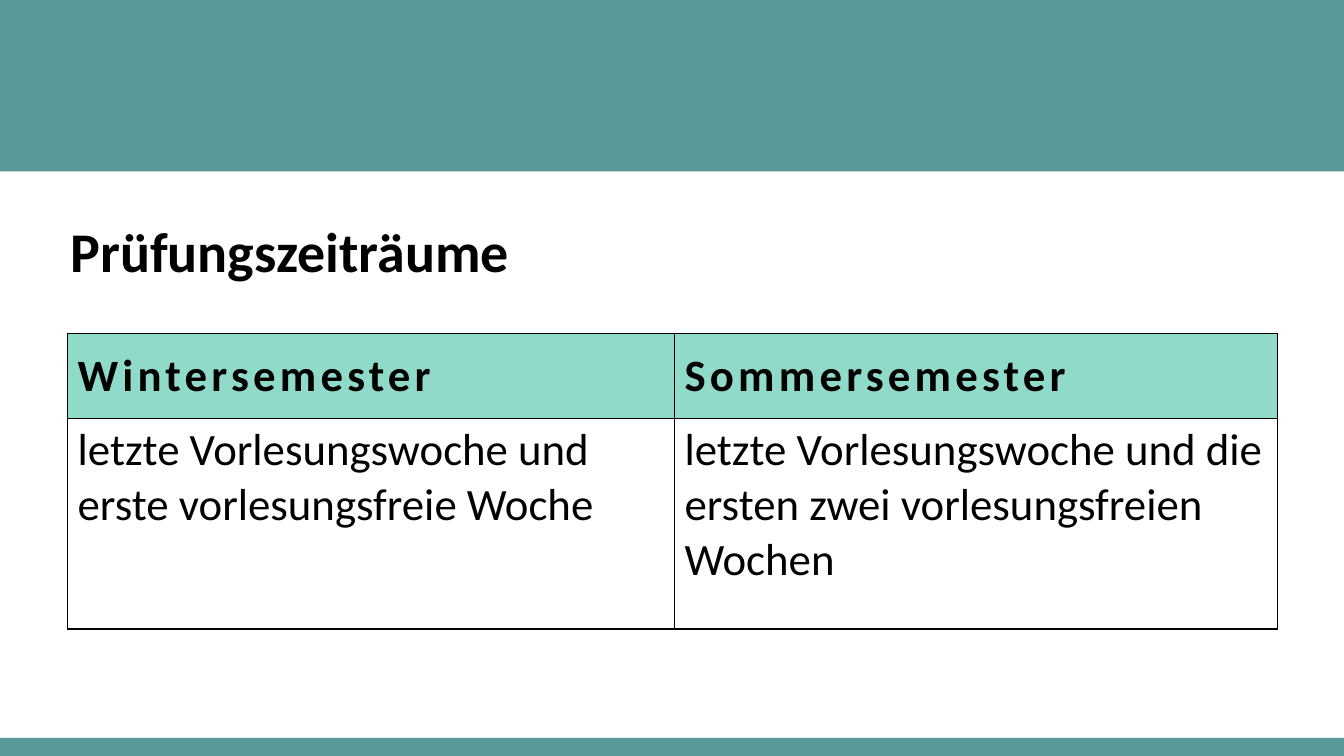
"""Build the slide on examination periods."""
from lxml.etree import SubElement
from pptx import Presentation
from pptx.dml.color import RGBColor
from pptx.enum.shapes import MSO_SHAPE
from pptx.enum.text import MSO_ANCHOR, PP_ALIGN
from pptx.oxml.ns import qn
from pptx.util import Inches, Pt

TITLE = "Prüfungszeiträume"
ROWS = [
    ("Wintersemester", "Sommersemester"),
    ("letzte Vorlesungswoche und erste vorlesungsfreie Woche",
     "letzte Vorlesungswoche und die ersten zwei vorlesungsfreien Wochen"),
]
WIDTHS = [6.02, 5.98]
HEIGHTS = [0.84, 2.09]
BANDS = [(0, 1.7), (7.32, 0.18)]
WIDE, HIGH = 13.33, 7.5
TEAL, MINT, WHITE, BLACK = "589898", "8FDAC8", "FFFFFF", "000000"


def paint(fill, color):
    fill.solid()
    fill.fore_color.rgb = RGBColor.from_string(color)


def style(para, size, bold):
    para.alignment = PP_ALIGN.LEFT
    font = para.font
    font.name, font.size, font.bold = "Calibri", Pt(size), bold
    paint(font.fill, BLACK)


def border(cell):
    props = cell._tc.get_or_add_tcPr()
    for spot, side in enumerate(("lnL", "lnR", "lnT", "lnB")):
        line = SubElement(props, qn(f"a:{side}"), w=str(Pt(1)))
        fill = SubElement(line, qn("a:solidFill"))
        SubElement(fill, qn("a:srgbClr"), val=BLACK)
        props.remove(line)
        props.insert(spot, line)


def add_bands(slide):
    for top, height in BANDS:
        band = slide.shapes.add_shape(
            MSO_SHAPE.RECTANGLE, 0, Inches(top), Inches(WIDE), Inches(height))
        band.shadow.inherit = False
        paint(band.fill, TEAL)
        band.line.fill.background()


def add_title(slide):
    title = slide.shapes.title
    title.left, title.top = Inches(0.6), Inches(2.1)
    title.width, title.height = Inches(12), Inches(1.21)
    frame = title.text_frame
    frame.text = TITLE
    frame.vertical_anchor = MSO_ANCHOR.TOP
    style(frame.paragraphs[0], 40, True)


def add_grid(slide):
    grid = slide.shapes.add_table(
        len(ROWS), len(WIDTHS), Inches(0.67), Inches(3.31),
        Inches(sum(WIDTHS)), Inches(sum(HEIGHTS))).table
    for col, width in zip(grid.columns, WIDTHS):
        col.width = Inches(width)
    for r, texts in enumerate(ROWS):
        grid.rows[r].height = Inches(HEIGHTS[r])
        head = r == 0
        for c, text in enumerate(texts):
            cell = grid.cell(r, c)
            cell.text = text
            cell.vertical_anchor = MSO_ANCHOR.MIDDLE if head else MSO_ANCHOR.TOP
            paint(cell.fill, MINT if head else WHITE)
            border(cell)
            para = cell.text_frame.paragraphs[0]
            style(para, 32, head)
            if head:
                para.runs[0].font._element.set("spc", "300")


def main():
    deck = Presentation()
    deck.slide_width, deck.slide_height = Inches(WIDE), Inches(HIGH)
    slide = deck.slides.add_slide(deck.slide_layouts[5])
    paint(slide.background.fill, WHITE)
    add_bands(slide)
    add_title(slide)
    add_grid(slide)
    deck.save("out.pptx")


if __name__ == "__main__":
    main()
